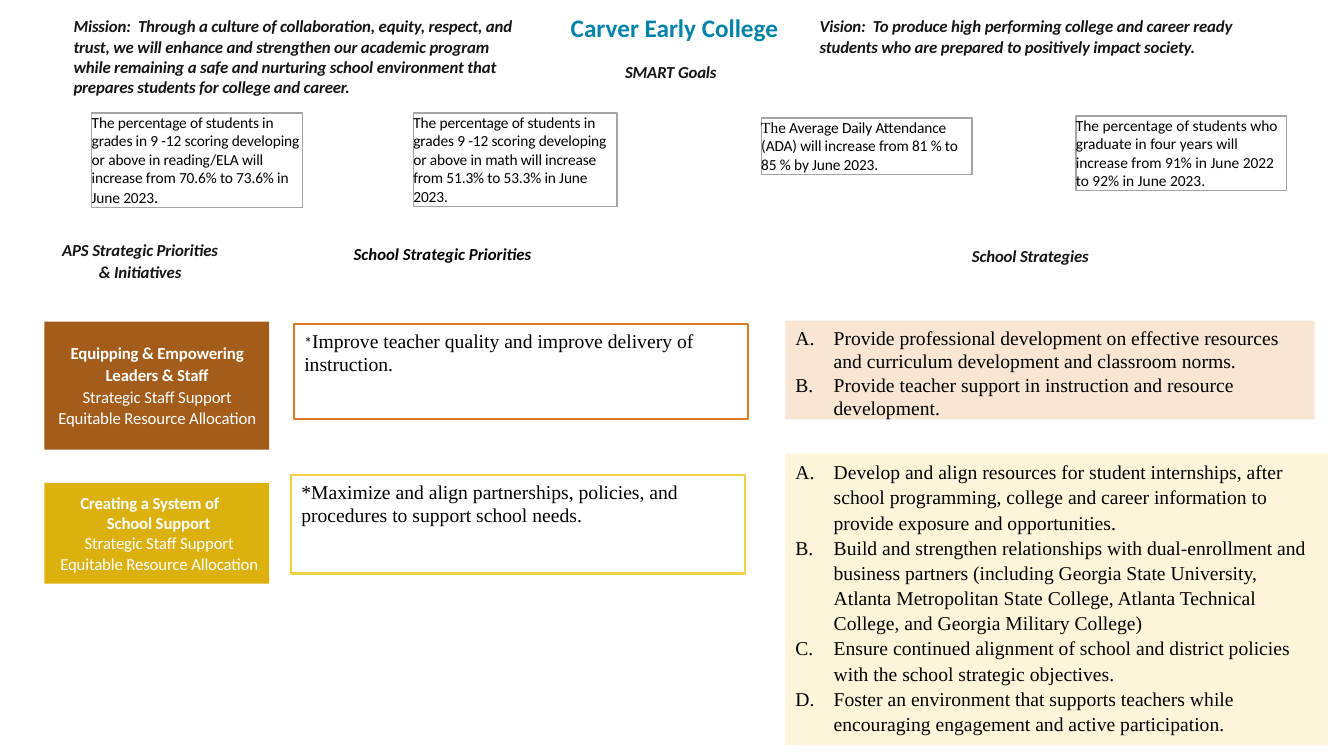
from dataclasses import dataclass

from pptx import Presentation
from pptx.dml.color import RGBColor
from pptx.enum.shapes import MSO_SHAPE
from pptx.enum.text import MSO_ANCHOR, MSO_AUTO_SIZE, PP_ALIGN
from pptx.oxml.xmlchemy import OxmlElement
from pptx.util import Inches, Pt

RECTANGLE = MSO_SHAPE.RECTANGLE
LEFT, CENTER = PP_ALIGN.LEFT, PP_ALIGN.CENTER
TOP, MIDDLE = MSO_ANCHOR.TOP, MSO_ANCHOR.MIDDLE
FIT_SHAPE, NO_FIT = MSO_AUTO_SIZE.SHAPE_TO_FIT_TEXT, MSO_AUTO_SIZE.NONE


@dataclass(frozen=True)
class Theme:
    sans: str = "Calibri"
    serif: str = "Times New Roman"
    title_size: int = 18
    heading_size: int = 12
    goal_size: int = 11
    body_size: int = 14
    black: str = "000000"
    white: str = "FFFFFF"
    heading: str = "151515"
    title: str = "0083A9"
    goal_line: str = "A4A4A4"
    staff: str = "A35C19"
    staff_line: str = "DA7B22"
    staff_tint: str = "F8E5D2"
    support: str = "DCB10E"
    support_line: str = "F3CF45"
    support_tint: str = "FDF5DA"


def write_text(paragraph, text, *, font, size, color, bold=False, italic=False,
               tracking=0, align=LEFT, margin=0, first=0, right=0, before=0,
               after=0, line=None, lettered=False):
    properties = paragraph._p.get_or_add_pPr()
    if lettered:
        letters = OxmlElement("a:buAutoNum")
        letters.set("type", "alphaUcPeriod")
        properties.append(letters)
    for name, value in (("marL", margin), ("indent", first), ("marR", right)):
        properties.set(name, str(Inches(value)))
    paragraph.alignment = align
    paragraph.space_before = Pt(before)
    paragraph.space_after = Pt(after)
    if line:
        paragraph.line_spacing = line
    run = paragraph.add_run()
    run.text = text
    run.font.name = font
    run.font.size = Pt(size)
    run.font.bold = bold
    run.font.italic = italic
    run.font.color.rgb = RGBColor.from_string(color)
    run._r.get_or_add_rPr().set("spc", str(round(tracking * 100)))


class PlanSlide:
    def __init__(self, presentation, theme):
        self.theme = theme
        self.slide = presentation.slides.add_slide(presentation.slide_layouts[6])

    def fill_frame(self, shape, paragraphs, *, tight=False, grow=False, anchor=TOP, **style):
        frame = shape.text_frame
        frame.word_wrap = True
        frame.auto_size = FIT_SHAPE if grow else NO_FIT
        frame.vertical_anchor = anchor
        if tight:
            frame.margin_left = frame.margin_right = frame.margin_bottom = 0
            frame.margin_top = Inches(0.01) if tight == "heading" else 0
        for index, runs in enumerate(paragraphs):
            paragraph = frame.paragraphs[0] if index == 0 else frame.add_paragraph()
            for text, changes in runs:
                options = {**style, **changes}
                if index == 0:
                    options["before"] = 0
                write_text(paragraph, text, **options)

    def heading(self, box, *lines, tight="heading", **changes):
        theme = self.theme
        style = dict(font=theme.sans, size=theme.heading_size, color=theme.heading,
                     bold=True, italic=True, tracking=-0.1, margin=0.01, before=1)
        shape = self.slide.shapes.add_textbox(*map(Inches, box))
        self.fill_frame(shape, [[(line, {})] for line in lines], tight=tight,
                        grow=True, **{**style, **changes})

    def panel(self, box, paragraphs, *, fill=None, outline=None, weight=1.5, **style):
        shape = self.slide.shapes.add_shape(RECTANGLE, *map(Inches, box))
        shape.shadow.inherit = False
        if fill:
            shape.fill.solid()
            shape.fill.fore_color.rgb = RGBColor.from_string(fill)
        else:
            shape.fill.background()
        if outline:
            shape.line.color.rgb = RGBColor.from_string(outline)
            shape.line.width = Pt(weight)
        else:
            shape.line.fill.background()
        self.fill_frame(shape, paragraphs, **style)

    def goal(self, box, *runs):
        theme = self.theme
        self.panel(box, [runs], outline=theme.goal_line, weight=1, tight=True, grow=True,
                   font=theme.sans, size=theme.goal_size, color=theme.black, tracking=-0.1)

    def initiative(self, box, fill, paragraphs, **layout):
        theme = self.theme
        self.panel(box, paragraphs, fill=fill, anchor=MIDDLE, align=CENTER, font=theme.sans,
                   size=theme.heading_size, color=theme.white, tracking=-0.1, **layout)

    def priority(self, box, outline, *runs):
        theme = self.theme
        self.panel(box, [runs], outline=outline, font=theme.serif,
                   size=theme.body_size, color=theme.black)

    def strategies(self, box, fill, items, line=None):
        theme = self.theme
        self.panel(box, [[(item, {})] for item in items], fill=fill, font=theme.serif,
                   size=theme.body_size, color=theme.black, line=line,
                   margin=0.38, first=-0.38, lettered=True)


def main():
    presentation = Presentation()
    presentation.slide_width = Inches(13.33)
    presentation.slide_height = Inches(7.5)
    theme = Theme()
    plan = PlanSlide(presentation, theme)

    plan.heading((4.78, 0.11, 3.81, 0.32), "Carver Early College", size=theme.title_size,
                 color=theme.title, italic=False, tracking=0, align=CENTER)
    plan.heading((6.19, 0.6, 0.96, 0.23), "SMART Goals")
    plan.heading((0.72, 0.15, 4.5, 0.82),
                 "Mission:  Through a culture of collaboration, equity, respect, and trust, we will "
                 "enhance and strengthen our academic program while remaining a safe and nurturing "
                 "school environment that prepares students for college and career.")
    plan.heading((8.12, 0.15, 4.64, 0.42),
                 "Vision:  To produce high performing college and career ready students who are "
                 "prepared to positively impact society.")
    plan.heading((0.27, 2.37, 2.23, 0.43), "APS Strategic Priorities", "& Initiatives",
                 align=CENTER, margin=0.54, first=-0.53)
    plan.heading((3.41, 2.37, 3.62, 0.3), "School Strategic Priorities", tight=False,
                 color=theme.black, tracking=0, margin=0)
    plan.heading((7.39, 2.43, 5.65, 0.22), "School Strategies", align=CENTER)

    plan.goal((0.91, 1.12, 2.09, 0.94),
              ("The percentage of students in grades in 9 -12 scoring developing or above in "
               "reading/ELA will increase from 70.6% to 73.6% in June 2023", {}),
              (".", {"size": theme.heading_size}))
    plan.goal((4.1, 1.12, 2.02, 0.93),
              ("The percentage of students in grades 9 -12 scoring developing or above in math "
               "will increase from 51.3% to 53.3% in June 2023.", {}))
    plan.goal((7.55, 1.17, 2.09, 0.56),
              ("Th", {"font": theme.serif, "tracking": 0}),
              ("e Average Daily Attendance (ADA) will increase from 81 % to 85 % by June 2023.", {}))
    plan.goal((10.67, 1.15, 2.09, 0.74),
              ("The percentage of students who graduate in four years will increase from 91% in "
               "June 2022 to 92% in June 2023.", {"tracking": 0}))

    bold = {"bold": True}
    plan.initiative((0.44, 3.19, 2.23, 1.27), theme.staff,
                    [[("Equipping & Empowering", bold)],
                     [("Leaders & Staff", bold)],
                     [("Strategic Staff Support", {})],
                     [("Equitable Resource Allocation", {})]],
                    margin=0.37, first=-0.36, before=1)
    plan.initiative((0.44, 4.79, 2.23, 1), theme.support,
                    [[("Creating a System of School Support",
                       {"bold": True, "margin": 0.2, "first": -0.18, "right": 0.16})],
                     [("Strategic Staff Support", {})],
                     [("Equitable Resource Allocation", {})]],
                    margin=0.05)

    plan.priority((2.92, 3.21, 4.5, 0.95), theme.staff_line,
                  ("*", {"font": theme.sans, "size": theme.goal_size}),
                  ("Improve teacher quality and improve delivery of instruction.", {}))
    plan.priority((2.89, 4.71, 4.5, 0.98), theme.support_line,
                  ("*Maximize and align partnerships, policies, and procedures to support "
                   "school needs.", {}))

    plan.strategies((7.79, 3.18, 5.25, 0.98), theme.staff_tint, [
        "Provide professional development on effective resources and curriculum development "
        "and classroom norms.",
        "Provide teacher support in instruction and resource development."])
    plan.strategies((7.79, 4.5, 5.38, 2.89), theme.support_tint, [
        "Develop and align resources for student internships, after school programming, college "
        "and career information to provide exposure and opportunities.",
        "Build and strengthen relationships with dual-enrollment and business partners "
        "(including Georgia State University, Atlanta Metropolitan State College, Atlanta "
        "Technical College, and Georgia Military College)",
        "Ensure continued alignment of school and district policies with the school strategic "
        "objectives.",
        "Foster an environment that supports teachers while encouraging engagement and active "
        "participation."], line=1.07)

    presentation.save("out.pptx")


if __name__ == "__main__":
    main()
